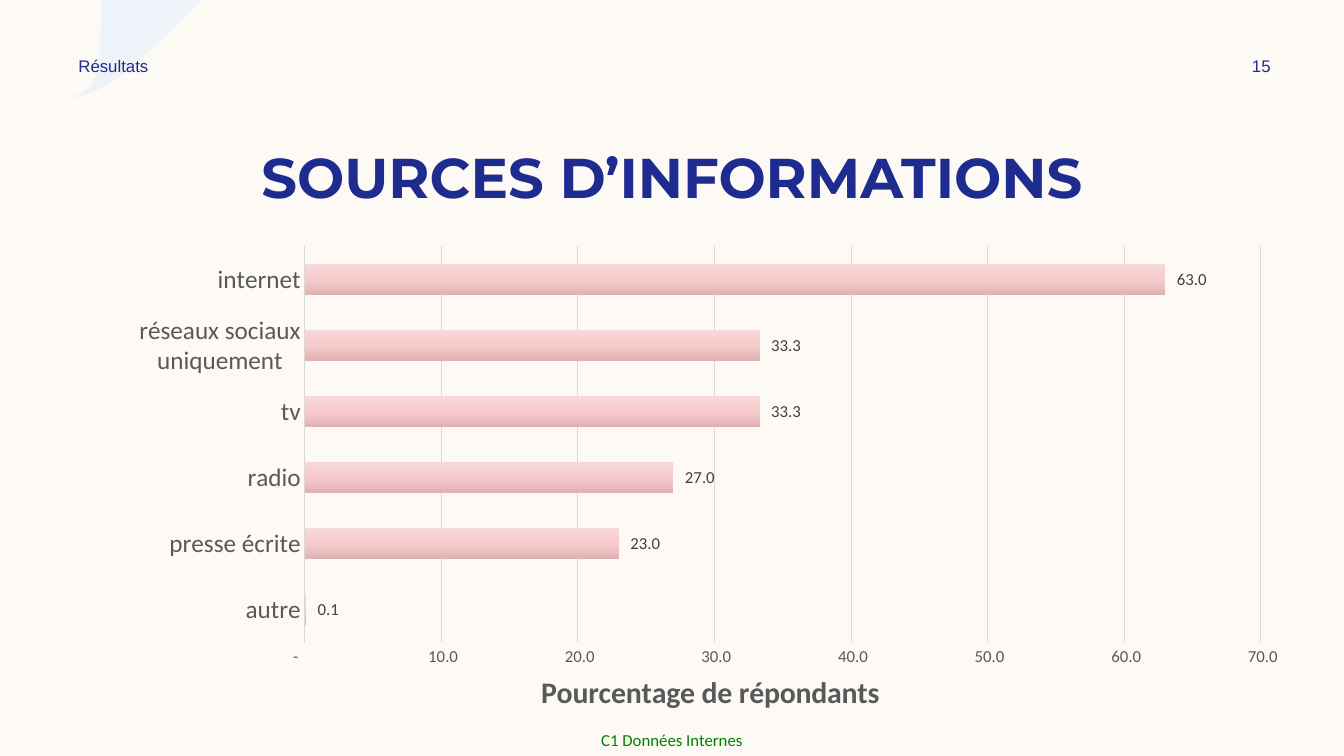
import math
import pptx
import pptx.util
import pptx.chart.data
import pptx.dml.color
import pptx.enum.chart
import pptx.enum.text
import pptx.oxml
import pptx.oxml.ns
from pptx.util import Inches

# Content
TITLE = "SOURCES D’INFORMATIONS"
AXIS_TITLE = "Pourcentage de répondants"
SOURCES = [
    ("autre", 0.1),
    ("presse écrite", 23),
    ("radio", 27),
    ("tv", 33.3),
    ("réseaux sociaux uniquement", 33.3),
    ("internet", 63),
]
NUMBER_FORMAT = r'_(* #\ ##0.0_);_(* \(#\ ##0.0\);_(* "-"??_)'
COLORS = {
    "background": "FDFAF6", "rings": "EEF3FA", "navy": "1F2C8F",
    "green": "008000", "axis": "595959", "label": "404040", "grid": "D9D9D9",
}
BAR_GRADIENT = [(0, "F7D7D8"), (50, "F7CBCC"), (100, "DFB1B2")]
# text, box, font, colour, alignment, inset
LABELS = [
    ("C1 Données Internes", (5.78, 7.18, 1.77, 0.32), "Calibri", "green", "CENTER", 0),
    ("Résultats", (0.68, 0.5, 3.5, 0.3), "Arial", "navy", "LEFT", 0.1),
    ("15", (11.97, 0.5, 1.08, 0.3), "Arial", "navy", "CENTER", 0.1),
]
# Rings share a centre just above the top left corner
RING_COUNT, RING_WIDTH = 17, 0.03
RING_OUTER, RING_INNER, RING_CENTER_Y = 2.46, 0.32, -0.16
PLOT = {"x": 0.2, "y": 0.03, "w": 0.78, "h": 0.81}
PLOT["h"] = 0.84 - PLOT["y"]


def color(name):
    return pptx.dml.color.RGBColor.from_string(COLORS[name])


def style(font, name, size, color_name, bold=False):
    font.name, font.size, font.bold = name, pptx.util.Pt(size), bold
    font.color.rgb = color(color_name)


def box(values):
    return [Inches(v) for v in values]


def arc(radius):
    """Bezier points from the top edge of the slide down to its left edge."""
    start = math.asin(-RING_CENTER_Y / radius)
    x, bottom = radius * math.cos(start), RING_CENTER_Y + radius
    reach = 4 / 3 * math.tan((math.pi / 2 - start) / 4) * radius
    return [(x, 0), (x - reach * math.sin(start), reach * math.cos(start)),
            (reach, bottom), (0, bottom)]


prs = pptx.Presentation()
prs.slide_width, prs.slide_height = Inches(13.33), Inches(7.5)
s = prs.slides.add_slide(prs.slide_layouts[5])
s.background.fill.solid()
s.background.fill.fore_color.rgb = color("background")

# Corner rings
step = (RING_OUTER - RING_INNER) / (RING_COUNT - 1)
builder = None
for i in range(RING_COUNT):
    outer = RING_OUTER - i * step
    points = arc(outer) + arc(outer - RING_WIDTH)[::-1]
    if builder is None:
        builder = s.shapes.build_freeform(*points[0], scale=Inches(1))
    else:
        builder.move_to(*points[0])
    builder.add_line_segments(points[1:], close=True)
rings = builder.convert_to_shape()
rings.shadow.inherit = False
rings.fill.solid()
rings.fill.fore_color.rgb = color("rings")
rings.line.fill.background()

# Each ring has seven segments: turn both arcs of three into curves
segments = list(rings._element.iter(pptx.oxml.ns.qn("a:lnTo")))
for first in range(0, len(segments), 7):
    for begin in (first, first + 4):
        curve = pptx.oxml.parse_xml(f'<a:cubicBezTo {pptx.oxml.ns.nsdecls("a")}/>')
        segments[begin].addprevious(curve)
        for segment in segments[begin:begin + 3]:
            curve.append(segment[0])
            segment.getparent().remove(segment)

# Title
title = s.shapes.title
title.left, title.top, title.width, title.height = box((0.83, 1.33, 11.67, 0.84))
tf = title.text_frame
tf.text = TITLE
tf.vertical_anchor = pptx.enum.text.MSO_ANCHOR.MIDDLE
p = tf.paragraphs[0]
p.alignment = pptx.enum.text.PP_ALIGN.CENTER
style(p.runs[0].font, "Montserrat", 40, "navy", True)

# Section name, page number and footer
for text, place, font, color_name, align, inset in LABELS:
    tf = s.shapes.add_textbox(*box(place)).text_frame
    tf.word_wrap = True
    tf.vertical_anchor = pptx.enum.text.MSO_ANCHOR.MIDDLE
    tf.margin_left = tf.margin_right = Inches(inset)
    tf.margin_top = tf.margin_bottom = Inches(inset / 2)
    tf.text = text
    p = tf.paragraphs[0]
    p.alignment = pptx.enum.text.PP_ALIGN[align]
    style(p.runs[0].font, font, 12, color_name)

# Bar chart
data = pptx.chart.data.CategoryChartData()
data.categories = [name for name, _ in SOURCES]
data.add_series(AXIS_TITLE, [value for _, value in SOURCES])
chart = s.shapes.add_chart(
    pptx.enum.chart.XL_CHART_TYPE.BAR_CLUSTERED, *box((0.59, 2.3, 12.16, 4.85)), data).chart
chart.has_legend = chart.has_title = False
chart.font.name, chart.font.size = "Calibri", pptx.util.Pt(10)

plot = chart.plots[0]
plot.gap_width, plot.overlap, plot.vary_by_categories = 115, -20, False
plot.has_data_labels = True
labels = plot.data_labels
labels.show_value = True
labels.position = pptx.enum.chart.XL_LABEL_POSITION.OUTSIDE_END
labels.number_format, labels.number_format_is_linked = NUMBER_FORMAT, False
style(labels.font, "Calibri", 12, "label")

# Axes
cat_axis, val_axis = chart.category_axis, chart.value_axis
for axis, size in ((cat_axis, 18), (val_axis, 12)):
    axis.major_tick_mark = axis.minor_tick_mark = pptx.enum.chart.XL_TICK_MARK.NONE
    style(axis.tick_labels.font, "Calibri", size, "axis")
cat_axis.format.line.color.rgb = color("grid")
cat_axis.format.line.width = pptx.util.Pt(1)
val_axis.format.line.fill.background()
val_axis.minimum_scale, val_axis.maximum_scale, val_axis.major_unit = 0, 70, 10
val_axis.tick_labels.number_format = NUMBER_FORMAT
val_axis.tick_labels.number_format_is_linked = False
grid = val_axis.major_gridlines.format.line
grid.color.rgb, grid.width = color("grid"), pptx.util.Pt(0.75)
tf = val_axis.axis_title.text_frame
tf.text = AXIS_TITLE
style(tf.paragraphs[0].runs[0].font, "Calibri", 21.3, "axis", True)

# Three-stop bar gradient
series = plot.series[0]
series.invert_if_negative = False
series.format.fill.gradient()
series.format.fill.gradient_angle = 270
stop_list = next(series._element.iter(pptx.oxml.ns.qn("a:gsLst")))
for stop in list(stop_list):
    stop_list.remove(stop)
for position, value in BAR_GRADIENT:
    stop_list.append(pptx.oxml.parse_xml(
        f'<a:gs {pptx.oxml.ns.nsdecls("a")} pos="{position * 1000}">'
        f'<a:srgbClr val="{value}"/></a:gs>'))

# Fixed inner plot area
area = chart._chartSpace.chart.plotArea
for old in area.findall(pptx.oxml.ns.qn("c:layout")):
    area.remove(old)
sizes = "".join(f'<c:{key} val="{value:.2f}"/>' for key, value in PLOT.items())
area.insert(0, pptx.oxml.parse_xml(
    f'<c:layout {pptx.oxml.ns.nsdecls("c")}><c:manualLayout><c:layoutTarget val="inner"/>'
    f'<c:xMode val="edge"/><c:yMode val="edge"/>{sizes}</c:manualLayout></c:layout>'))

prs.save("out.pptx")
